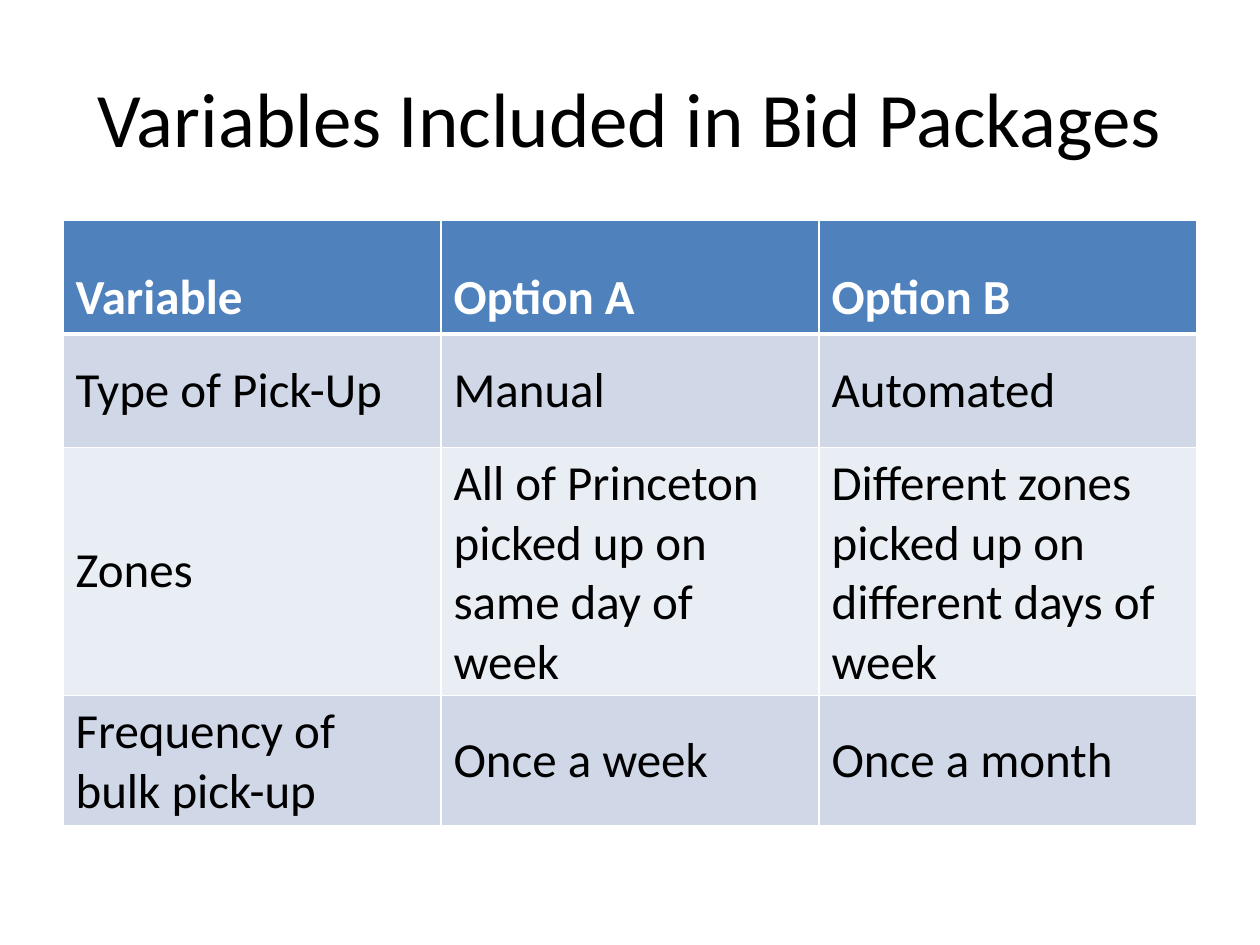
from lxml import etree
from pptx import Presentation
from pptx.dml.color import RGBColor
from pptx.enum.text import MSO_ANCHOR as ANCHOR, PP_ALIGN as ALIGN
from pptx.oxml.ns import qn
from pptx.util import Inches, Pt

BLACK = RGBColor(0x00, 0x00, 0x00)
WHITE = RGBColor(0xFF, 0xFF, 0xFF)
HEADER_BLUE = RGBColor(0x4F, 0x81, 0xBD)
BAND_DARK = RGBColor(0xD0, 0xD8, 0xE8)
BAND_LIGHT = RGBColor(0xE9, 0xED, 0xF4)

ROWS = [
    ("Variable", "Option A", "Option B"),
    ("Type of Pick-Up", "Manual", "Automated"),
    ("Zones", "All of Princeton picked up on same day of week",
     "Different zones picked up on different days of week"),
    ("Frequency of bulk pick-up", "Once a week", "Once a month"),
]
ROW_HEIGHTS = [0.9, 0.9, 1.55, 0.9]
ROW_FILLS = [HEADER_BLUE, BAND_DARK, BAND_LIGHT, BAND_DARK]


def style_text(p, size, color, bold=False):
    font = p.runs[0].font
    font.name = "Calibri"
    font.size = Pt(size)
    font.bold = bold
    font.color.rgb = color


def set_borders(cell, widths):
    """Draw white cell borders; widths maps L, R, T and B to points."""
    tcPr = cell._tc.get_or_add_tcPr()
    for i, (side, width) in enumerate(widths.items()):
        ln = etree.Element(qn(f"a:ln{side}"), w=str(Pt(width)))
        fill = etree.SubElement(ln, qn("a:solidFill"))
        etree.SubElement(fill, qn("a:srgbClr"), val=str(WHITE))
        tcPr.insert(i, ln)


prs = Presentation()
prs.slide_width, prs.slide_height = Inches(10), Inches(7.5)
s = prs.slides.add_slide(prs.slide_layouts[6])

title = s.shapes.add_textbox(Inches(0.5), Inches(0.3), Inches(9), Inches(1.25))
tf = title.text_frame
tf.word_wrap = True
tf.vertical_anchor = ANCHOR.MIDDLE
tf.text = "Variables Included in Bid Packages"
p = tf.paragraphs[0]
p.alignment = ALIGN.CENTER
style_text(p, 44, BLACK)

frame = s.shapes.add_table(len(ROWS), len(ROWS[0]), Inches(0.5), Inches(1.75),
                           Inches(9), Inches(4.8))
table = frame.table
for r, texts in enumerate(ROWS):
    table.rows[r].height = Inches(ROW_HEIGHTS[r])
    header = r == 0
    for c, text in enumerate(texts):
        cell = table.cell(r, c)
        cell.text = text
        cell.vertical_anchor = ANCHOR.BOTTOM if header else ANCHOR.MIDDLE
        cell.fill.solid()
        cell.fill.fore_color.rgb = ROW_FILLS[r]
        style_text(cell.text_frame.paragraphs[0], 28,
                   WHITE if header else BLACK, header)
        set_borders(cell, {"L": 1, "R": 1, "T": 3 if r == 1 else 1,
                           "B": 3 if header else 1})
frame.height = Inches(4.8)

prs.save("out.pptx")
